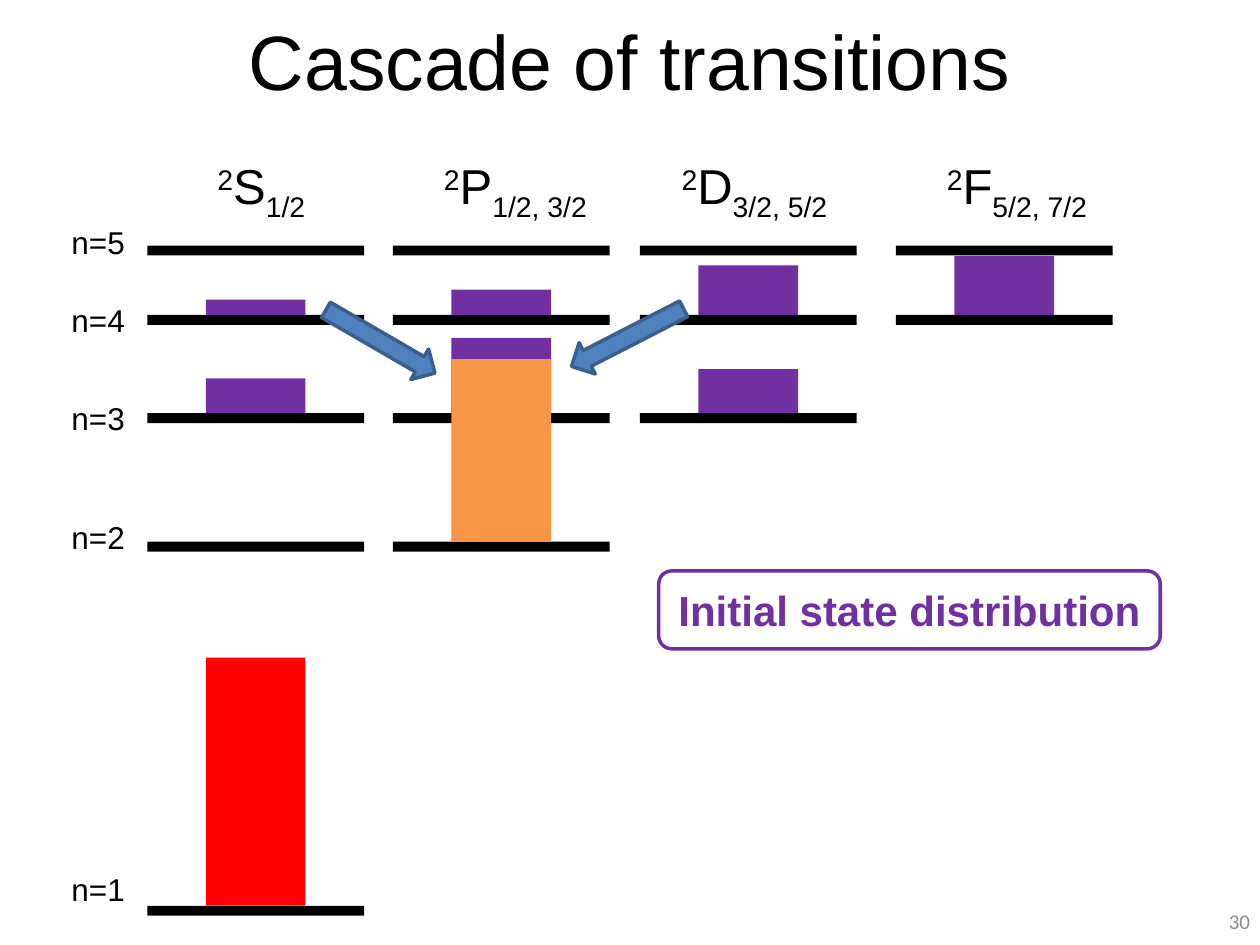
from dataclasses import dataclass
from pptx import Presentation
from pptx.dml.color import RGBColor
from pptx.enum.shapes import MSO_SHAPE
from pptx.enum.text import MSO_ANCHOR, PP_ALIGN
from pptx.util import Cm, Pt


@dataclass(frozen=True)
class Theme:
    font: str = "Arial"
    number_font: str = "Calibri"
    black: str = "000000"
    gray: str = "8C8C8C"
    purple: str = "7030A0"
    orange: str = "F79646"
    red: str = "FF0000"
    blue: str = "4F81BD"
    dark_blue: str = "3A5F8C"
    title: int = 44
    term: int = 28
    callout: int = 24
    level: int = 18
    number: int = 12
    outline: int = 2


theme = Theme()

TITLE = "Cascade of transitions"
CALLOUT = "Initial state distribution"
PAGE_NUMBER = "30"

COLUMNS = {"S": 2.97, "P": 7.92, "D": 12.9, "F": 18.06}
TERMS = [
    ("S", "1/2", 3.96, 2.62),
    ("P", "1/2, 3/2", 8.51, 3.76),
    ("D", "3/2, 5/2", 13.18, 4.06),
    ("F", "5/2, 7/2", 18.62, 3.76),
]
LEVELS = {
    5: (4.95, 4.37, "SPDF"),
    4: (6.35, 5.94, "SPDF"),
    3: (8.33, 7.92, "SPD"),
    2: (10.92, 10.31, "SP"),
    1: (18.26, 17.42, "S"),
}
POPULATIONS = [
    ("S", 4, 0.31, theme.purple),
    ("P", 4, 0.51, theme.purple),
    ("D", 4, 1, theme.purple),
    ("F", 4, 1.19, theme.purple),
    ("S", 3, 0.7, theme.purple),
    ("P", 3, 1.52, theme.purple),
    ("D", 3, 0.89, theme.purple),
    ("P", 2, 3.68, theme.orange),
    ("S", 1, 5, theme.red),
]
ARROWS = [(6.4, 6.53, 30.1), (11.38, 6.45, 152.8)]
LINE_WIDTH, LINE_HEIGHT, BAR_WIDTH = 4.37, 0.2, 2.01


def color(value):
    return RGBColor.from_string(value)


def place(item, left, top, width, height):
    item.left, item.top, item.width, item.height = map(Cm, (left, top, width, height))


def style(paragraph, size, ink=theme.black, font=theme.font, align=PP_ALIGN.LEFT, bold=False):
    paragraph.alignment = align
    paragraph.font.name = font
    paragraph.font.size = Pt(size)
    paragraph.font.bold = bold
    paragraph.font.color.rgb = color(ink)


def add_block(page, kind, left, top, width, height, fill=None, line=None):
    block = page.shapes.add_shape(kind, Cm(left), Cm(top), Cm(width), Cm(height))
    block.shadow.inherit = False
    if fill:
        block.fill.solid()
        block.fill.fore_color.rgb = color(fill)
    else:
        block.fill.background()
    if line:
        block.line.color.rgb = color(line)
        block.line.width = Pt(theme.outline)
    else:
        block.line.fill.background()
    return block


def add_text(page, text, left, top, width, height, size, **look):
    box = page.shapes.add_textbox(Cm(left), Cm(top), Cm(width), Cm(height))
    box.text_frame.word_wrap = True
    paragraph = box.text_frame.paragraphs[0]
    if text:
        paragraph.text = text
    style(paragraph, size, **look)
    return box


def add_term(page, letter, momenta, left, width):
    box = add_text(page, "", left, 3.02, width, 1.45, theme.term, align=PP_ALIGN.CENTER)
    box.text_frame.word_wrap = False
    for text, baseline in (("2", 30000), (letter, 0), (momenta, -25000)):
        span = box.text_frame.paragraphs[0].add_run()
        span.text = text
        span.font._element.set("baseline", str(baseline))


def main():
    deck = Presentation()
    deck.slide_width, deck.slide_height = Cm(25.4), Cm(19.05)
    page = deck.slides.add_slide(deck.slide_layouts[5])

    title = page.shapes.title
    place(title, 0, 0, 25.4, 2.39)
    title.text_frame.text = TITLE
    title.text_frame.vertical_anchor = MSO_ANCHOR.MIDDLE
    style(title.text_frame.paragraphs[0], theme.title, align=PP_ALIGN.CENTER)

    for n, (top, label_top, letters) in LEVELS.items():
        for letter in letters:
            add_block(page, MSO_SHAPE.RECTANGLE, COLUMNS[letter], top,
                      LINE_WIDTH, LINE_HEIGHT, theme.black)
        add_text(page, f"n={n}", 1.19, label_top, 1.78, 1.02, theme.level)

    for letter, n, height, fill in POPULATIONS:
        left = COLUMNS[letter] + (LINE_WIDTH - BAR_WIDTH) / 2
        add_block(page, MSO_SHAPE.RECTANGLE, left, LEVELS[n][0] - height,
                  BAR_WIDTH, height, fill)

    for left, top, angle in ARROWS:
        arrow = add_block(page, MSO_SHAPE.RIGHT_ARROW, left, top, 2.54, 0.71,
                          theme.blue, theme.dark_blue)
        arrow.rotation = angle

    callout = add_block(page, MSO_SHAPE.ROUNDED_RECTANGLE, 13.28, 11.51, 10.11, 1.57,
                        line=theme.purple)
    callout.text_frame.text = CALLOUT
    callout.text_frame.vertical_anchor = MSO_ANCHOR.MIDDLE
    style(callout.text_frame.paragraphs[0], theme.callout, theme.purple,
          align=PP_ALIGN.CENTER, bold=True)

    number = add_text(page, PAGE_NUMBER, 19.53, 18.06, 5.92, 1.02, theme.number,
                      ink=theme.gray, font=theme.number_font, align=PP_ALIGN.RIGHT)
    number.text_frame.vertical_anchor = MSO_ANCHOR.MIDDLE

    for term in TERMS:
        add_term(page, *term)

    deck.save("out.pptx")


if __name__ == "__main__":
    main()
